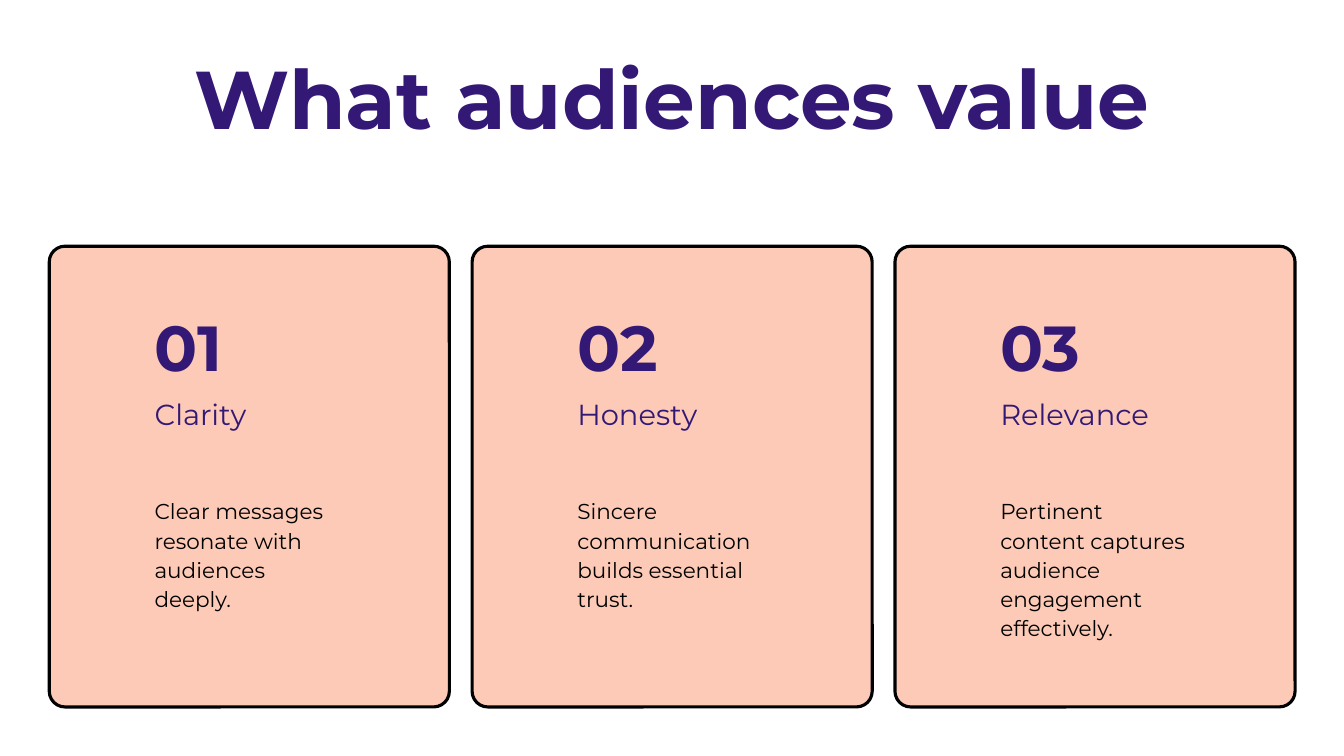
"""Build the slide "What audiences value" with three numbered cards."""
import pptx
import pptx.dml.color
import pptx.enum.shapes
import pptx.enum.text
import pptx.util

Pt = pptx.util.Pt

TITLE = "What audiences value"
VALUES = [
    ("01", "Clarity", "Clear messages resonate with audiences deeply."),
    ("02", "Honesty", "Sincere communication builds essential trust."),
    ("03", "Relevance", "Pertinent content captures audience engagement effectively."),
]

PURPLE, PEACH, BLACK = "331975", "FCCAB6", "000000"
FONT = "Montserrat"

SLIDE_WIDTH, SLIDE_HEIGHT = 960, 540
CARD_LEFT, CARD_TOP, CARD_WIDTH, CARD_HEIGHT = 35.2, 175.9, 285.8, 329.1
CARD_PITCH = 302.05
CORNER_RADIUS = 11.2
TEXT_INSET, TEXT_WIDTH = 75.2, 135.4

# top, height, font size, line spacing, colour, bold
TITLE_STYLE = (58.5, 62.2, PURPLE, True)
CARD_TEXT_STYLES = [
    (226.1, 50.4, (45.4, 48.3, PURPLE, True)),
    (283, 25.2, (20.7, 25.1, PURPLE, False)),
    (353.5, 101.5, (15.4, 20.9, BLACK, False)),
]


def rgb(hex_colour):
    return pptx.dml.color.RGBColor.from_string(hex_colour)


def place(part, left, top, width, height):
    part.left, part.top, part.width, part.height = map(Pt, (left, top, width, height))


def write(part, text, style, align):
    size, spacing, colour, bold = style
    frame = part.text_frame
    frame.text = text
    frame.word_wrap = True
    frame.auto_size = pptx.enum.text.MSO_AUTO_SIZE.NONE
    frame.vertical_anchor = pptx.enum.text.MSO_ANCHOR.TOP
    frame.margin_left = frame.margin_top = frame.margin_right = frame.margin_bottom = 0
    paragraph = frame.paragraphs[0]
    paragraph.alignment = align
    paragraph.line_spacing = Pt(spacing)
    paragraph.font.name = FONT
    paragraph.font.size = Pt(size)
    paragraph.font.bold = bold
    paragraph.font.color.rgb = rgb(colour)


def add_card(slide, left):
    card = slide.shapes.add_shape(
        pptx.enum.shapes.MSO_SHAPE.ROUNDED_RECTANGLE,
        Pt(left), Pt(CARD_TOP), Pt(CARD_WIDTH), Pt(CARD_HEIGHT))
    card.adjustments[0] = CORNER_RADIUS / CARD_WIDTH
    card.shadow.inherit = False
    card.fill.solid()
    card.fill.fore_color.rgb = rgb(PEACH)
    card.line.color.rgb = rgb(BLACK)
    card.line.width = Pt(2.25)


def main():
    presentation = pptx.Presentation()
    presentation.slide_width, presentation.slide_height = Pt(SLIDE_WIDTH), Pt(SLIDE_HEIGHT)
    slide = presentation.slides.add_slide(presentation.slide_layouts[5])

    title = slide.shapes.title
    place(title, CARD_LEFT, 41.8, SLIDE_WIDTH - 2 * CARD_LEFT, 63.4)
    write(title, TITLE, TITLE_STYLE, pptx.enum.text.PP_ALIGN.CENTER)

    for index, value in enumerate(VALUES):
        left = CARD_LEFT + index * CARD_PITCH
        add_card(slide, left)
        for text, (top, height, style) in zip(value, CARD_TEXT_STYLES):
            label = slide.shapes.add_textbox(0, 0, 0, 0)
            place(label, left + TEXT_INSET, top, TEXT_WIDTH, height)
            write(label, text, style, pptx.enum.text.PP_ALIGN.LEFT)

    presentation.save("out.pptx")


if __name__ == "__main__":
    main()
